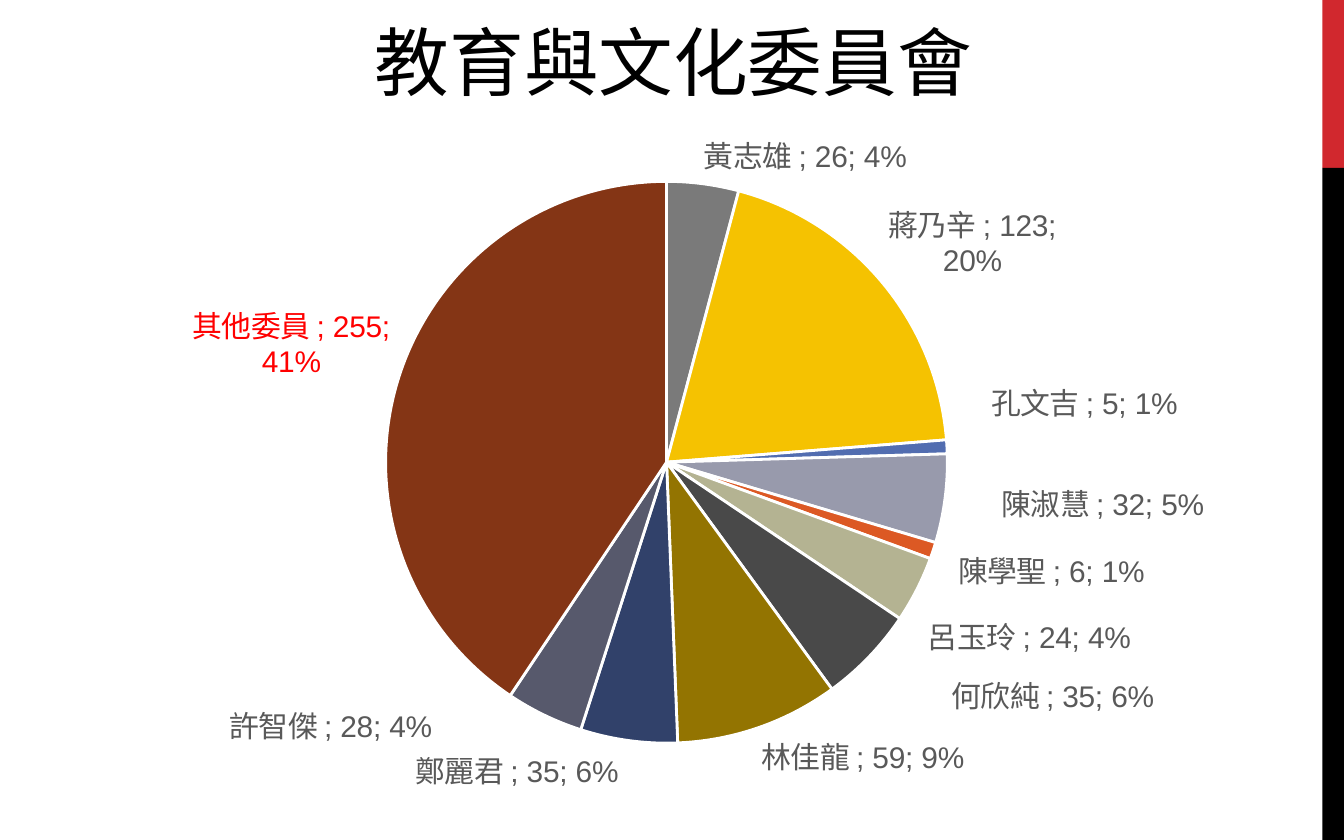
"""Build the slide with the pie chart of the Education and Culture Committee."""
from lxml import etree
from pptx import Presentation
from pptx.chart.data import CategoryChartData
from pptx.dml.color import RGBColor
from pptx.enum.chart import XL_CHART_TYPE, XL_LABEL_POSITION
from pptx.enum.shapes import MSO_SHAPE
from pptx.enum.text import MSO_ANCHOR, PP_ALIGN
from pptx.oxml.ns import qn
from pptx.util import Inches, Pt

TITLE = "教育與文化委員會"
FONT = "Arial"
COLORS = {"red": "D1282E", "black": "000000", "white": "FFFFFF",
          "label": "595959", "highlight": "FF0000"}
MEMBERS = [
    ("黃志雄 ", 26, "7A7A7A"),
    ("蔣乃辛 ", 123, "F5C201"),
    ("孔文吉 ", 5, "526DB0"),
    ("陳淑慧 ", 32, "989AAC"),
    ("陳學聖 ", 6, "DC5924"),
    ("呂玉玲 ", 24, "B4B392"),
    ("何欣純 ", 35, "494949"),
    ("林佳龍 ", 59, "937401"),
    ("鄭麗君 ", 35, "31416A"),
    ("許智傑 ", 28, "57596C"),
    ("其他委員 ", 255, "843515"),
]
OTHERS = len(MEMBERS) - 1
LABEL_SHIFTS = {2: (0.27, -0.33), 3: (0.36, -0.13), 4: (0.13, -0.03), 5: (0.03, 0.16),
                6: (0.57, 0.09), 8: (-0.07, 0), 9: (-0.81, -0.14)}
SIDE_BARS = [("red", 0, 1.25), ("black", 1.25, 5)]
CHART_LEFT, CHART_TOP, CHART_WIDTH, CHART_HEIGHT = 0.69, 0.84, 8.62, 5.19
PIE_X, PIE_Y, PIE_RADIUS = 4.96, 3.44, 2.09
LABEL_PARTS = {"c:showLegendKey": "0", "c:showVal": "1", "c:showCatName": "1",
               "c:showSerName": "0", "c:showPercent": "1", "c:showBubbleSize": "0",
               "c:showLeaderLines": "0"}


def rgb(name):
    return RGBColor.from_string(COLORS[name])


def style_font(font, size, color):
    for key, value in {"size": Pt(size), "name": FONT, "bold": False}.items():
        setattr(font, key, value)
    font.color.rgb = rgb(color)


def make_layout(values):
    layout = etree.Element(qn("c:layout"))
    manual = etree.SubElement(layout, qn("c:manualLayout"))
    for key, value in values.items():
        etree.SubElement(manual, qn("c:" + key)).set("val", str(value))
    return layout


def show_parts(labels):
    for tag, value in LABEL_PARTS.items():
        part = labels.find(qn(tag))
        if part is not None:
            part.set("val", value)
    separator = etree.Element(qn("c:separator"))
    separator.text = "; "
    labels.find(qn("c:showBubbleSize")).addnext(separator)


def add_side_bars(slide):
    for color, top, height in SIDE_BARS:
        bar = slide.shapes.add_shape(MSO_SHAPE.RECTANGLE, Inches(9.84), Inches(top),
                                     Inches(0.16), Inches(height))
        bar.shadow.inherit = False
        bar.fill.solid()
        bar.fill.fore_color.rgb = rgb(color)
        bar.line.fill.background()


def add_title(slide):
    frame = slide.shapes.add_textbox(Inches(0.7), Inches(0.19),
                                     Inches(8.62), Inches(0.65)).text_frame
    margins = {"margin_left": 0.08, "margin_right": 0.08,
               "margin_top": 0.04, "margin_bottom": 0.04}
    for key, value in margins.items():
        setattr(frame, key, Inches(value))
    frame.word_wrap = True
    frame.vertical_anchor = MSO_ANCHOR.MIDDLE
    heading = frame.paragraphs[0]
    heading.alignment = PP_ALIGN.CENTER
    heading.line_spacing = 0.8
    run = heading.add_run()
    run.text = TITLE
    style_font(run.font, 40, "black")


def add_pie(slide):
    names, counts, fills = zip(*MEMBERS)
    data = CategoryChartData()
    data.categories = names
    data.add_series("Series 1", counts)
    chart = slide.shapes.add_chart(
        XL_CHART_TYPE.PIE, Inches(CHART_LEFT), Inches(CHART_TOP),
        Inches(CHART_WIDTH), Inches(CHART_HEIGHT), data).chart
    chart.has_title = False
    chart.has_legend = False
    style_font(chart.font, 10, "black")

    plot = chart.plots[0]
    plot.vary_by_categories = True
    series = plot.series[0]
    for index, fill in enumerate(fills):
        style = series.points[index].format
        style.fill.solid()
        style.fill.fore_color.rgb = RGBColor.from_string(fill)
        style.line.color.rgb = rgb("white")
        style.line.width = Pt(1.5)

    labels = series.data_labels
    style_font(labels.font, 16, "label")
    labels.position = XL_LABEL_POSITION.OUTSIDE_END
    for index in [*LABEL_SHIFTS, OTHERS]:
        label = series.points[index].data_label
        style_font(label.font, 16, "highlight" if index == OTHERS else "label")
        label.position = XL_LABEL_POSITION.OUTSIDE_END

    label_set = labels.font and series.points[0].data_label and chart.element.find(
        ".//" + qn("c:ser") + "/" + qn("c:dLbls"))
    show_parts(label_set)
    for label in label_set.findall(qn("c:dLbl")):
        show_parts(label)
        position = label.find(qn("c:idx"))
        shift = LABEL_SHIFTS.get(int(position.get("val")))
        if shift:
            position.addnext(make_layout({"x": round(shift[0] / CHART_WIDTH, 4),
                                          "y": round(shift[1] / CHART_HEIGHT, 4)}))

    plot_area = chart.element.find(".//" + qn("c:plotArea"))
    for old in plot_area.findall(qn("c:layout")):
        plot_area.remove(old)
    plot_area.insert(0, make_layout({
        "layoutTarget": "inner", "xMode": "edge", "yMode": "edge",
        "x": round((PIE_X - PIE_RADIUS - CHART_LEFT) / CHART_WIDTH, 4),
        "y": round((PIE_Y - PIE_RADIUS - CHART_TOP) / CHART_HEIGHT, 4),
        "w": round(2 * PIE_RADIUS / CHART_WIDTH, 4),
        "h": round(2 * PIE_RADIUS / CHART_HEIGHT, 4)}))


def main():
    deck = Presentation()
    deck.slide_width, deck.slide_height = Inches(10), Inches(6.25)
    slide = deck.slides.add_slide(deck.slide_layouts[6])
    add_side_bars(slide)
    add_title(slide)
    add_pie(slide)
    deck.save("out.pptx")


if __name__ == "__main__":
    main()
